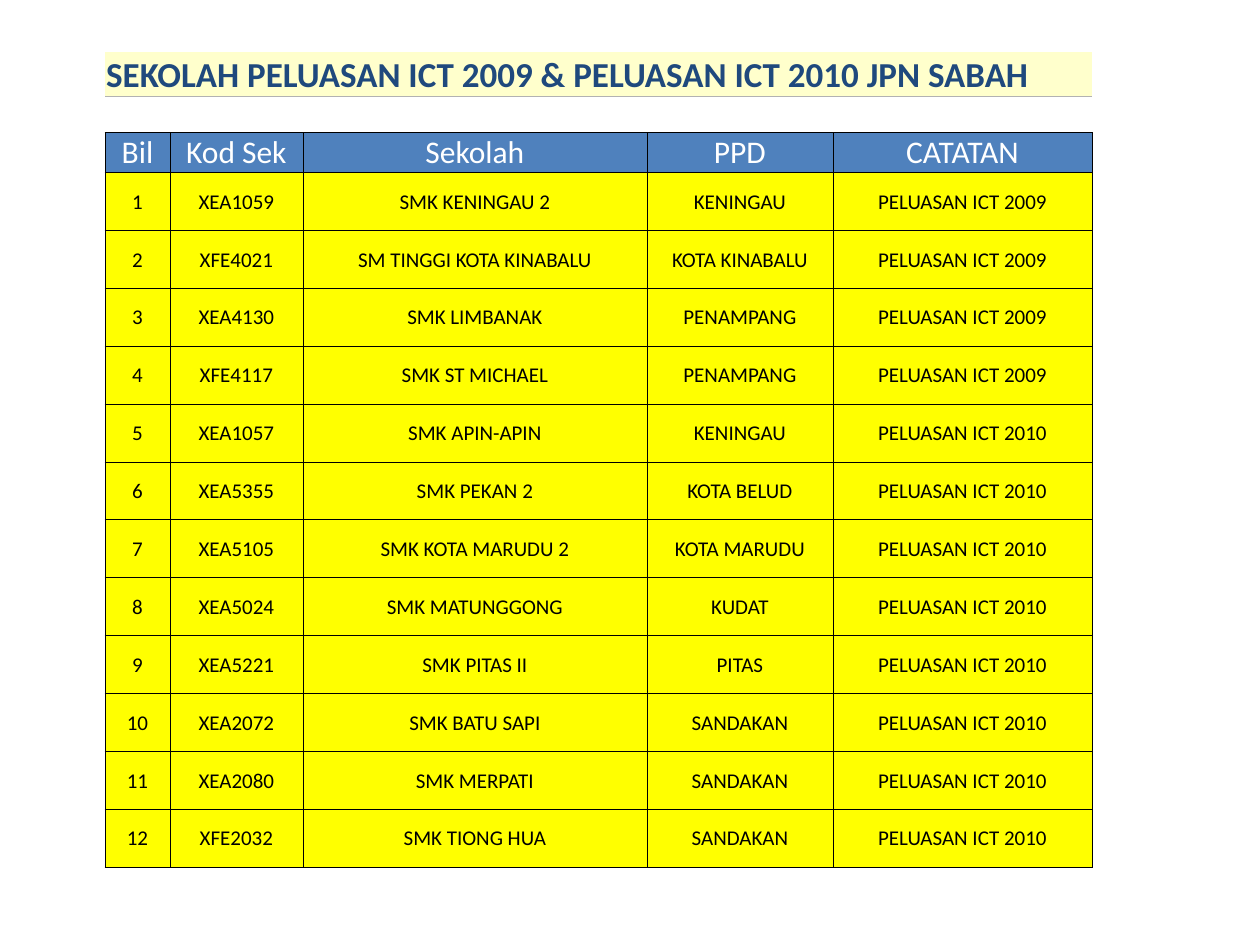
import pptx
import pptx.dml.color
import pptx.enum.text
import pptx.oxml.ns
import pptx.util
from lxml import etree

Pt = pptx.util.Pt
ANCHOR = pptx.enum.text.MSO_ANCHOR
ALIGN = pptx.enum.text.PP_ALIGN

TITLE = "SEKOLAH PELUASAN ICT 2009 & PELUASAN ICT 2010 JPN SABAH"
HEADS = ["Bil", "Kod Sek", "Sekolah", "PPD", "CATATAN"]
SCHOOLS = [
    ("XEA1059", "SMK KENINGAU 2", "KENINGAU", 2009),
    ("XFE4021", "SM TINGGI KOTA KINABALU", "KOTA KINABALU", 2009),
    ("XEA4130", "SMK LIMBANAK", "PENAMPANG", 2009),
    ("XFE4117", "SMK ST MICHAEL", "PENAMPANG", 2009),
    ("XEA1057", "SMK APIN-APIN", "KENINGAU", 2010),
    ("XEA5355", "SMK PEKAN 2", "KOTA BELUD", 2010),
    ("XEA5105", "SMK KOTA MARUDU 2", "KOTA MARUDU", 2010),
    ("XEA5024", "SMK MATUNGGONG", "KUDAT", 2010),
    ("XEA5221", "SMK PITAS II", "PITAS", 2010),
    ("XEA2072", "SMK BATU SAPI", "SANDAKAN", 2010),
    ("XEA2080", "SMK MERPATI", "SANDAKAN", 2010),
    ("XFE2032", "SMK TIONG HUA", "SANDAKAN", 2010),
]
COLORS = {
    "title": "1F497D", "cream": "FFFFCC", "rule": "B2B2B2",
    "blue": "4F81BD", "white": "FFFFFF", "yellow": "FFFF00", "black": "000000",
}
LEFT, TOP = 60, 30
WIDTHS = [37.1, 76, 196.6, 106.3, 148]
HEIGHTS = [25.1, 20.6, 22.8] + [33.1] * len(SCHOOLS)


def rgb(name):
    return pptx.dml.color.RGBColor.from_string(COLORS[name])


def edge(cell, **sides):
    """Draw the named sides (L, R, T, B) in a colour; hide the others."""
    props = cell._tc.get_or_add_tcPr()
    qn = pptx.oxml.ns.qn
    for side in "LRTB":
        line = etree.SubElement(props, qn("a:ln" + side), w=str(Pt(0.5)))
        if side in sides:
            fill = etree.SubElement(line, qn("a:solidFill"))
            etree.SubElement(fill, qn("a:srgbClr"), val=COLORS[sides[side]])
        else:
            etree.SubElement(line, qn("a:noFill"))


def paint(cell, fill):
    cell.fill.solid()
    cell.fill.fore_color.rgb = rgb(fill)


def write(cell, text, size, color, bold=False, align=ALIGN.CENTER, anchor=ANCHOR.MIDDLE):
    cell.text = text
    cell.vertical_anchor = anchor
    para = cell.text_frame.paragraphs[0]
    para.alignment = align
    font = para.font
    font.name, font.size, font.bold = "Calibri", Pt(size), bold
    font.color.rgb = rgb(color)


def main():
    deck = pptx.Presentation()
    deck.slide_width, deck.slide_height = Pt(720), Pt(540)
    slide = deck.slides.add_slide(deck.slide_layouts[6])
    table = slide.shapes.add_table(
        len(HEIGHTS), len(WIDTHS), Pt(LEFT), Pt(TOP), Pt(sum(WIDTHS)), Pt(sum(HEIGHTS))
    ).table
    table.first_row = table.horz_banding = False
    for col, width in zip(table.columns, WIDTHS):
        col.width = Pt(width)
    for row, height in zip(table.rows, HEIGHTS):
        row.height = Pt(height)
    for cell in table.iter_cells():
        cell.margin_left = cell.margin_right = cell.margin_top = Pt(0.7)
        cell.margin_bottom = 0

    title, gap, head, *body = [list(row.cells) for row in table.rows]
    title[0].merge(title[-1])
    for cell in title:
        edge(cell, B="rule")
        paint(cell, "cream")
    write(title[0], TITLE, 20, "title", True, ALIGN.LEFT, ANCHOR.BOTTOM)

    for cell in gap:
        edge(cell, T="rule", B="black")
        cell.fill.background()
        # an empty cell takes its line height from the end mark
        cell.text_frame.paragraphs[0]._p.get_or_add_endParaRPr().set("sz", "1200")

    lines = [HEADS] + [
        (str(num), code, school, area, f"PELUASAN ICT {year}")
        for num, (code, school, area, year) in enumerate(SCHOOLS, 1)
    ]
    looks = [("blue", 18, "white")] + [("yellow", 12, "black")] * len(SCHOOLS)
    for cells, texts, (fill, size, color) in zip([head] + body, lines, looks):
        for cell, text in zip(cells, texts):
            edge(cell, L="black", R="black", T="black", B="black")
            paint(cell, fill)
            write(cell, text, size, color)

    deck.save("out.pptx")


if __name__ == "__main__":
    main()
